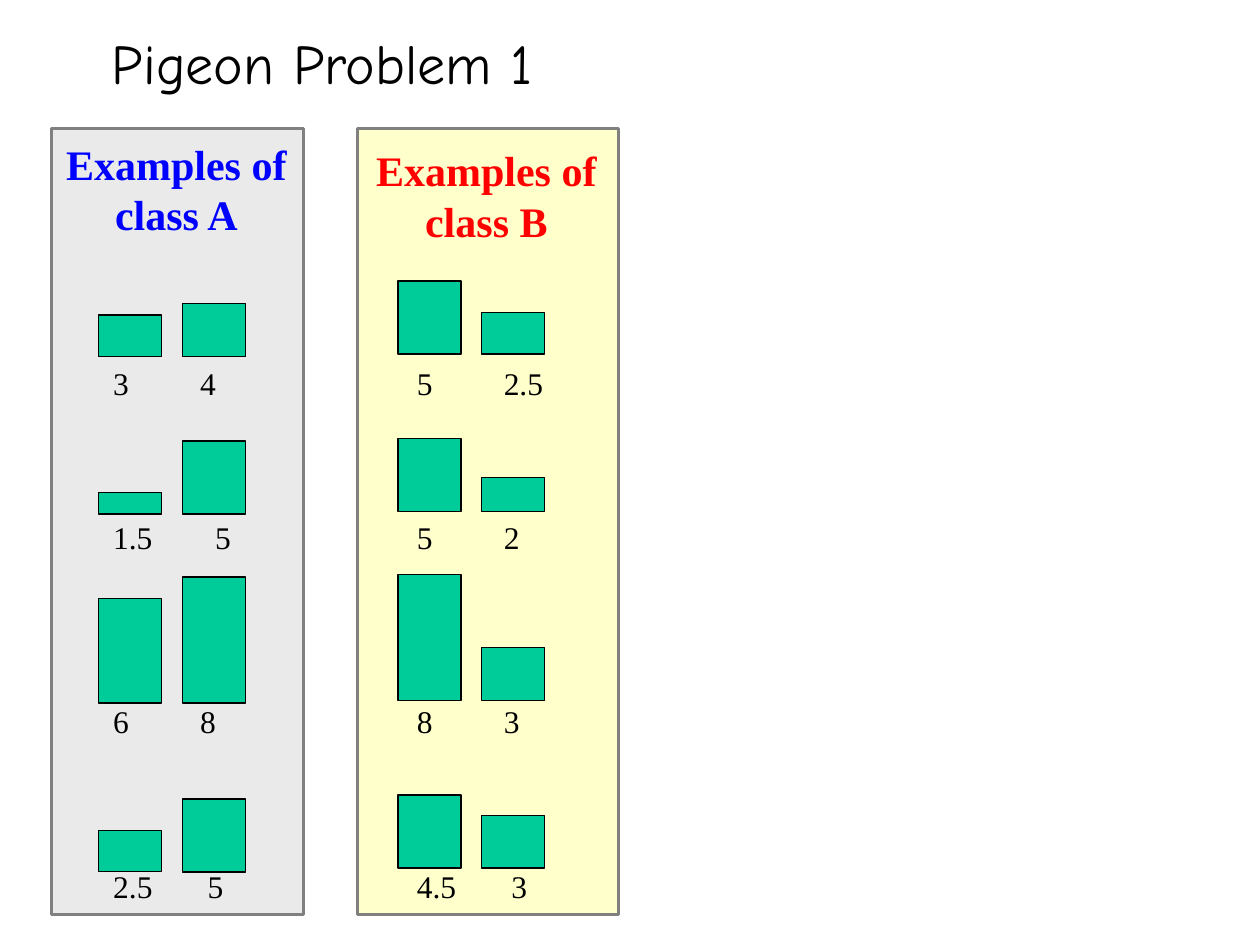
from lxml.etree import SubElement
from pptx import Presentation
from pptx.dml.color import RGBColor
from pptx.enum.shapes import MSO_SHAPE
from pptx.enum.text import MSO_AUTO_SIZE, PP_ALIGN
from pptx.oxml.ns import qn
from pptx.util import Inches, Pt

COLORS = {
    "black": "000000", "blue": "0000FF", "red": "FF0000", "gray": "808080",
    "panel_a": "EAEAEA", "panel_b": "FFFFCC", "bar": "00CC99",
}
FORMATS = {
    "title": {"name": "Comic Neue", "size": Pt(32)},
    "heading": {"name": "Times New Roman", "size": Pt(24), "bold": True},
    "values": {"name": "Times New Roman", "size": Pt(18)},
}
BAR_WIDTH = 0.5
VALUE_TOPS = (2.84, 4.06, 5.52, 6.83)

CLASS_A = {
    "box": (0.41, 1.02, 2, 6.24), "fill": "panel_a",
    "heading": ("Examples of class A", "blue", (0.27, 1.05, 2.26, 0.9)),
    "bar_lefts": (0.78, 1.45), "bar_bottoms": (2.83, 4.08, 5.58, 6.92),
    "values_left": 0.8,
    "examples": [
        (("3", "4"), (0.33, 0.42), 0.69),
        (("1.5", "5"), (0.17, 0.58), 0.81),
        (("6", "8"), (0.83, 1), 0.69),
        (("2.5", "5"), (0.33, 0.58), 0.75),
    ],
}
CLASS_B = {
    "box": (2.84, 1.02, 2.07, 6.24), "fill": "panel_b",
    "heading": ("Examples of class B", "red", (2.85, 1.1, 2.02, 0.9)),
    "bar_lefts": (3.16, 3.82), "bar_bottoms": (2.81, 4.06, 5.56, 6.89),
    "values_left": 3.21,
    "examples": [
        (("5", "2.5"), (0.58, 0.33), 0.69),
        (("5", "2"), (0.58, 0.27), 0.69),
        (("8", "3"), (1, 0.42), 0.69),
        (("4.5", "3"), (0.58, 0.42), 0.75),
    ],
}


def rgb(color):
    return RGBColor.from_string(COLORS[color])


def add_rectangle(shapes, box, fill, line, width):
    rectangle = shapes.add_shape(MSO_SHAPE.RECTANGLE, *map(Inches, box))
    rectangle.shadow.inherit = False
    rectangle.fill.solid()
    rectangle.fill.fore_color.rgb = rgb(fill)
    rectangle.line.color.rgb = rgb(line)
    rectangle.line.width = Pt(width)


def add_text(shapes, box, text, style, color="black", wrap=False, align=PP_ALIGN.LEFT):
    frame = shapes.add_textbox(*map(Inches, box)).text_frame
    frame.word_wrap = wrap
    frame.auto_size = MSO_AUTO_SIZE.SHAPE_TO_FIT_TEXT
    paragraph = frame.paragraphs[0]
    paragraph.alignment = align
    run = paragraph.add_run()
    run.text = text
    for attribute, value in FORMATS[style].items():
        setattr(run.font, attribute, value)
    run.font.color.rgb = rgb(color)
    return paragraph


def add_tab_stop(paragraph, position):
    stops = SubElement(paragraph._p.get_or_add_pPr(), qn("a:tabLst"))
    SubElement(stops, qn("a:tab"), pos=str(Inches(position)), algn="l")


def add_example(shapes, lefts, bottom, heights, values_box, values, tab):
    for left, height in zip(lefts, heights):
        add_rectangle(shapes, (left, bottom - height, BAR_WIDTH, height), "bar", "black", 0.75)
    add_tab_stop(add_text(shapes, values_box, "\t".join(values), "values"), tab)


def add_class_panel(slide, panel):
    shapes = slide.shapes.add_group_shape().shapes
    add_rectangle(shapes, panel["box"], panel["fill"], "gray", 1.5)
    heading, color, heading_box = panel["heading"]
    add_text(shapes, heading_box, heading, "heading", color, True, PP_ALIGN.CENTER)
    rows = zip(panel["examples"], panel["bar_bottoms"], VALUE_TOPS)
    for (values, heights, tab), bottom, top in rows:
        width = 0.2 + tab + (0.31 if "." in values[1] else 0.13)
        values_box = (panel["values_left"], top, width, 0.4)
        add_example(shapes, panel["bar_lefts"], bottom, heights, values_box, values, tab)


def main():
    presentation = Presentation()
    presentation.slide_width = Inches(10)
    presentation.slide_height = Inches(7.5)
    slide = presentation.slides.add_slide(presentation.slide_layouts[6])
    for panel in (CLASS_A, CLASS_B):
        add_class_panel(slide, panel)
    add_text(slide.shapes, (0.79, 0.18, 3.62, 0.63), "Pigeon Problem 1", "title")
    presentation.save("out.pptx")


if __name__ == "__main__":
    main()
